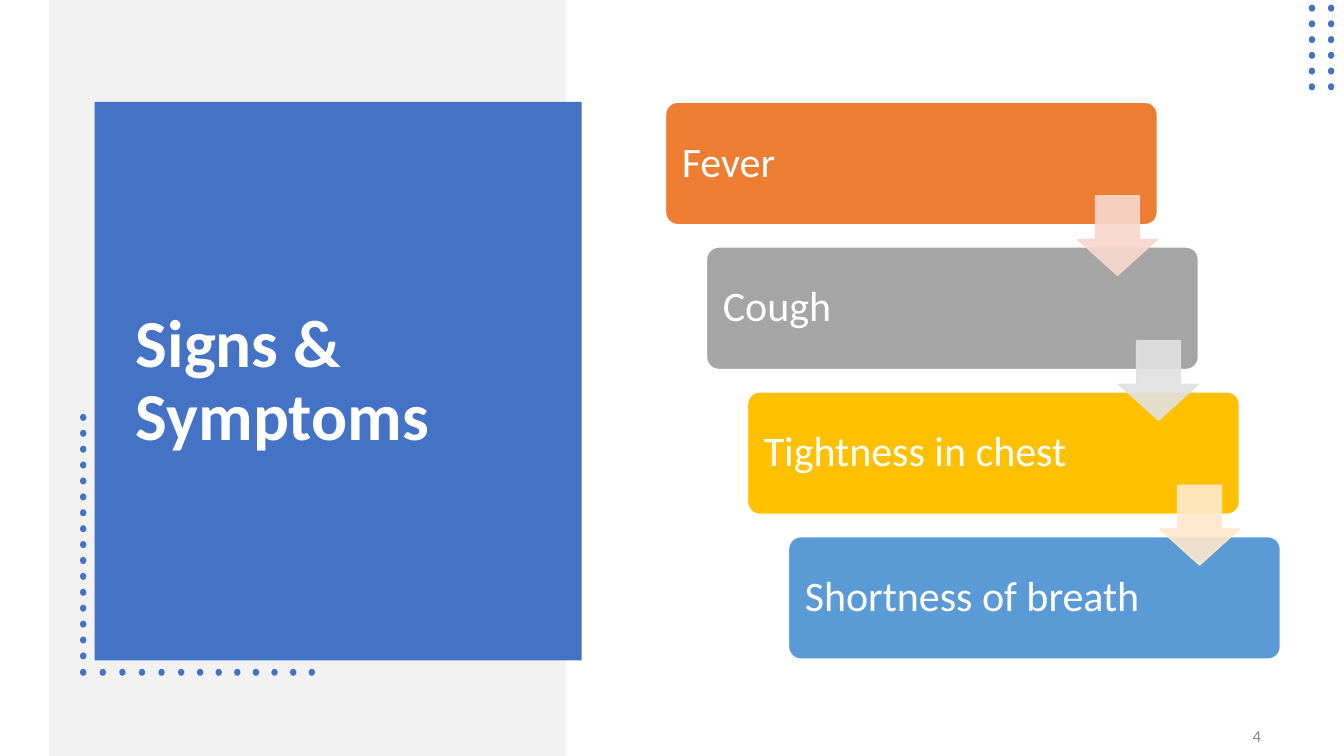
import pptx
import pptx.util
import pptx.dml.color
import pptx.enum.shapes
import pptx.enum.text
import pptx.oxml.ns
import lxml.etree

Pt = pptx.util.Pt
SHAPE = pptx.enum.shapes.MSO_SHAPE
ALIGN = pptx.enum.text.PP_ALIGN

COLORS = {
    "white": "FFFFFF", "band": "F2F2F2", "blue": "4472C4", "number": "898989",
    "orange": "ED7D31", "gray": "A5A5A5", "gold": "FFC000", "sky": "5B9BD5",
    "pale orange": "F8D7CE", "pale gray": "E1E1E1", "pale gold": "FFE8CC",
}


def rgb(color):
    return pptx.dml.color.RGBColor.from_string(COLORS[color])


def write_text(frame, text, size, color="white", bold=False, align=ALIGN.LEFT,
               line_spacing=None, space_after=None):
    paragraph = frame.paragraphs[0]
    paragraph.alignment = align
    paragraph.line_spacing = line_spacing
    paragraph.space_after = space_after
    run = paragraph.add_run()
    run.text = text
    run.font.name = "Calibri"
    run.font.size = Pt(size)
    run.font.bold = bold
    run.font.color.rgb = rgb(color)


class SlideBuilder:
    def __init__(self, slide):
        self.slide = slide

    def shape(self, kind, left, top, width, height, fill, line=None,
              adjustments=(), opacity=None):
        shape = self.slide.shapes.add_shape(kind, Pt(left), Pt(top), Pt(width), Pt(height))
        shape.shadow.inherit = False
        for i, value in enumerate(adjustments):
            shape.adjustments[i] = value
        shape.fill.solid()
        shape.fill.fore_color.rgb = rgb(fill)
        if line:
            shape.line.color.rgb = rgb(line)
            shape.line.width = Pt(1)
        else:
            shape.line.fill.background()
        if opacity:
            qn = pptx.oxml.ns.qn
            for color in shape.element.spPr.iter(qn("a:srgbClr")):
                lxml.etree.SubElement(color, qn("a:alpha"), val=str(opacity * 1000))
        return shape

    def text(self, text, left, top, width, height, inset=None, **style):
        box = self.slide.shapes.add_textbox(Pt(left), Pt(top), Pt(width), Pt(height))
        frame = box.text_frame
        frame.word_wrap = True
        frame.vertical_anchor = pptx.enum.text.MSO_ANCHOR.MIDDLE
        if inset:
            frame.margin_left = frame.margin_right = Pt(inset)
            frame.margin_top = frame.margin_bottom = Pt(inset)
        write_text(frame, text, **style)

    def dots(self, left, top, columns, rows, dx=0, dy=0):
        for row in range(rows):
            for column in range(columns):
                dot = self.shape(SHAPE.OVAL, left + column * dx, top + row * dy,
                                 5, 4.5, "blue")
                dot.rotation = 90


def main():
    deck = pptx.Presentation()
    deck.slide_width, deck.slide_height = Pt(960), Pt(540)
    builder = SlideBuilder(deck.slides.add_slide(deck.slide_layouts[6]))

    # Background band and corner dots
    builder.shape(SHAPE.RECTANGLE, 35, 0, 369, 540, "band")
    builder.dots(934.6, 3.6, columns=2, rows=6, dx=13.7, dy=11.23)

    # Title panel with its dotted corner
    builder.shape(SHAPE.RECTANGLE, 67.7, 72.7, 347.8, 399, "blue")
    builder.dots(56.9, 295.9, columns=1, rows=16, dy=11.36)
    builder.dots(56.9, 478, columns=6, rows=1, dx=14)
    builder.dots(140.4, 478, columns=7, rows=1, dx=13.3)
    builder.text("Signs & Symptoms", 90, 104.4, 298, 337,
                 size=48, bold=True, line_spacing=0.9)

    # Slide number
    builder.text("4", 692, 511, 216, 28.8, size=12, color="number",
                 align=ALIGN.RIGHT, space_after=Pt(6))

    # Staircase of symptoms
    step_x, step_y = 29.28, 103.44
    symptoms = [("Fever", "orange"), ("Cough", "gray"),
                ("Tightness in chest", "gold"), ("Shortness of breath", "sky")]
    for i, (symptom, color) in enumerate(symptoms):
        left, top = 475.4 + i * step_x, 73 + i * step_y
        builder.shape(SHAPE.ROUNDED_RECTANGLE, left, top, 351.3, 87.5, color,
                      line="white", adjustments=[0.1])
        builder.text(symptom, left + 2.6, top + 2.6, 260, 82.3, inset=9,
                     size=30, line_spacing=0.9)

    # Arrows leading down the steps
    for i, color in enumerate(["pale orange", "pale gray", "pale gold"]):
        builder.shape(SHAPE.DOWN_ARROW, 769.8 + i * step_x, 139.8 + i * step_y,
                      56.9, 56.9, color, line=color,
                      adjustments=[0.55, 0.45], opacity=90)

    deck.save("out.pptx")


if __name__ == "__main__":
    main()
